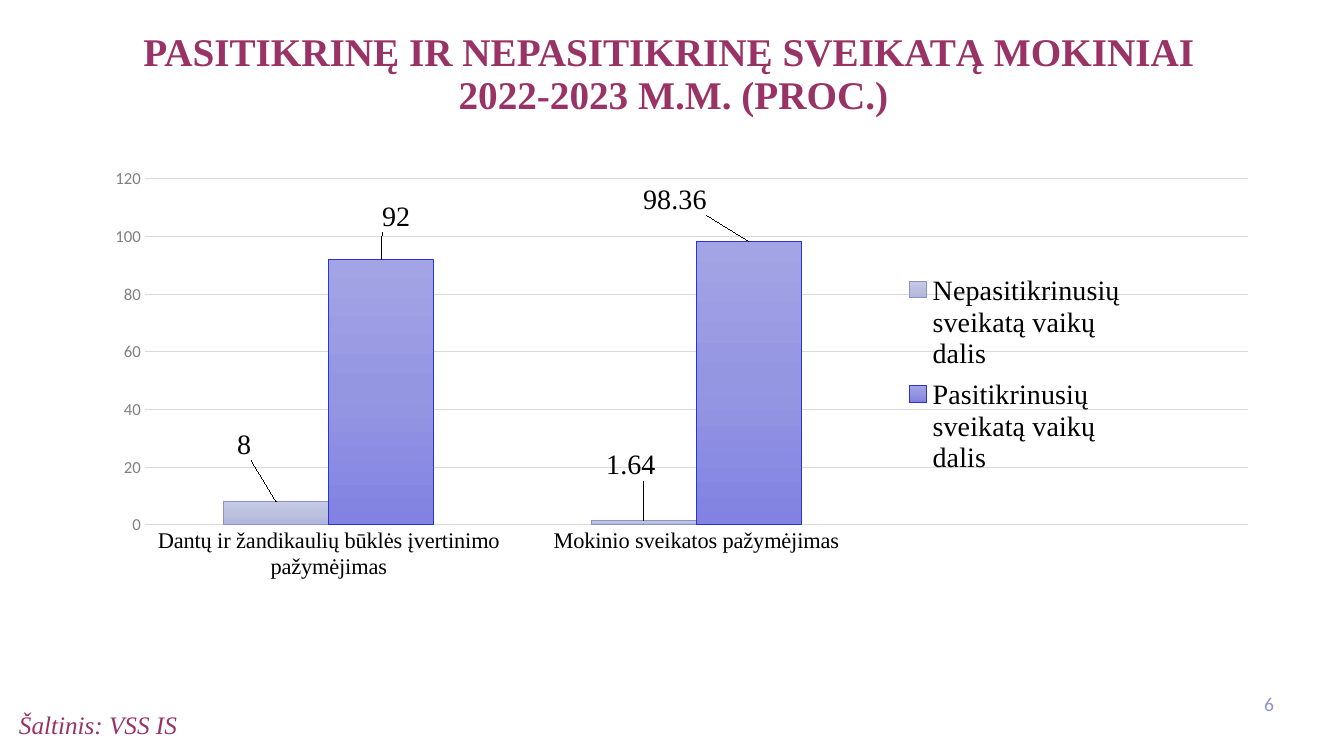
from copy import deepcopy

from lxml.etree import SubElement
from pptx import Presentation
from pptx.chart.data import CategoryChartData
from pptx.dml.color import RGBColor
from pptx.enum.chart import XL_CHART_TYPE, XL_LABEL_POSITION, XL_LEGEND_POSITION, XL_TICK_MARK
from pptx.enum.text import MSO_ANCHOR, PP_ALIGN
from pptx.oxml.ns import qn
from pptx.util import Pt

PX = 914400 / 100.8
SERIF = "Times New Roman"
SANS = "Calibri"
PLUM = RGBColor(0x99, 0x33, 0x66)
PERIWINKLE = RGBColor(0x8E, 0x96, 0xCD)
BLACK = RGBColor(0, 0, 0)
GRAY = RGBColor(0x80, 0x80, 0x80)
GRID = RGBColor(0xD9, 0xD9, 0xD9)
PALE_STOPS = (RGBColor(0xC8, 0xCB, 0xE6), RGBColor(0xBB, 0xC0, 0xDF), RGBColor(0xB1, 0xB6, 0xDD))
PALE_LINE = RGBColor(0x8A, 0x92, 0xC8)
BLUE_STOPS = (RGBColor(0xA3, 0xA4, 0xE6), RGBColor(0x95, 0x96, 0xE2), RGBColor(0x81, 0x82, 0xE2))
BLUE_LINE = RGBColor(0x2D, 0x33, 0xCB)

CATEGORIES = ("Dantų ir žandikaulių būklės įvertinimo pažymėjimas", "Mokinio sveikatos pažymėjimas", "")
SERIES = (
    ("Nepasitikrinusių sveikatą vaikų dalis", (8, 1.64, None),
     PALE_STOPS, PALE_LINE, ((-32, -37), (-13, -35))),
    ("Pasitikrinusių sveikatą vaikų dalis", (92, 98.36, None),
     BLUE_STOPS, BLUE_LINE, ((15, -23), (-74, -22))),
)


def px(length):
    return round(length * PX)


def set_font(font, name, size, color, bold=False, italic=False):
    font.name = name
    font.size = Pt(size)
    font.color.rgb = color
    font.bold = bold
    font.italic = italic


def add_text(slide, box, text, align=PP_ALIGN.LEFT, anchor=MSO_ANCHOR.TOP, spacing=1.0, **font):
    shape = slide.shapes.add_textbox(*map(px, box))
    frame = shape.text_frame
    frame.word_wrap = True
    frame.vertical_anchor = anchor
    paragraph = frame.paragraphs[0]
    paragraph.text = text
    paragraph.alignment = align
    paragraph.line_spacing = spacing
    for run in paragraph.runs:
        set_font(run.font, **font)


def make_layout(box, size, target=None):
    layout = SubElement(deepcopy(size["parent"]), qn("c:layout"))
    manual = SubElement(layout, qn("c:manualLayout"))
    if target:
        SubElement(manual, qn("c:layoutTarget"), val=target)
    if len(box) == 4:
        for name in ("xMode", "yMode"):
            SubElement(manual, qn(f"c:{name}"), val="edge")
    lengths = (size["width"], size["height"]) * 2
    for name, part, whole in zip("xywh", box, lengths):
        SubElement(manual, qn(f"c:{name}"), val=f"{part / whole:.4f}")
    return layout


def place(element, box, size, target=None, after=None):
    for existing in element.findall(qn("c:layout")):
        element.remove(existing)
    layout = make_layout(box, {**size, "parent": element}, target)
    if after is None:
        element.insert(0, layout)
    else:
        element.find(qn(after)).addnext(layout)


def format_axis(axis, name, size, color):
    axis.major_tick_mark = XL_TICK_MARK.NONE
    axis.minor_tick_mark = XL_TICK_MARK.NONE
    axis.format.line.fill.background()
    set_font(axis.tick_labels.font, name, size, color)


def format_series(series, stops, line, offsets, size):
    fill = series.format.fill
    fill.gradient()
    fill.gradient_angle = 270
    stop_list = next(series._element.iter(qn("a:gsLst")))
    stop_list.insert(1, deepcopy(stop_list[0]))
    for index, (stop, color) in enumerate(zip(fill.gradient_stops, stops)):
        stop.position = index / 2
        stop.color.rgb = color
    series.format.line.color.rgb = line
    series.format.line.width = Pt(0.75)
    series.data_labels.show_value = True
    set_font(series.data_labels.font, SANS, 12, GRAY)
    for index, offset in enumerate(offsets):
        label = series.points[index].data_label
        set_font(label.font, SERIF, 20, BLACK)
        label.position = XL_LABEL_POSITION.OUTSIDE_END
    for element, offset in zip(series._element.iter(qn("c:dLbl")), offsets):
        place(element, offset, size, after="c:idx")


def add_health_chart(slide, box):
    data = CategoryChartData()
    data.categories = CATEGORIES
    for name, values, *_ in SERIES:
        data.add_series(name, values)
    chart = slide.shapes.add_chart(XL_CHART_TYPE.COLUMN_CLUSTERED, *map(px, box), data).chart
    size = {"width": box[2], "height": box[3]}
    chart.has_title = False
    set_font(chart.font, SANS, 10, BLACK)

    plot = chart.plots[0]
    plot.gap_width = 150
    plot.overlap = 0
    plot.vary_by_categories = False
    for series, (_, _, stops, line, offsets) in zip(plot.series, SERIES):
        format_series(series, stops, line, offsets, size)

    format_axis(chart.category_axis, SERIF, 16, BLACK)
    value_axis = chart.value_axis
    format_axis(value_axis, SANS, 12, GRAY)
    value_axis.minimum_scale = 0
    value_axis.maximum_scale = 120
    value_axis.major_unit = 20
    value_axis.major_gridlines.format.line.color.rgb = GRID
    value_axis.major_gridlines.format.line.width = Pt(0.75)

    chart.has_legend = True
    legend = chart.legend
    legend.position = XL_LEGEND_POSITION.BOTTOM
    legend.include_in_layout = False
    set_font(legend.font, SERIF, 20, BLACK)
    place(legend._element, (808, 108, 230, 218), size, after="c:legendPos")
    plot_area = next(chart._chartSpace.iter(qn("c:plotArea")))
    place(plot_area, (53, 21, 1103, 346), size, target="inner")


def build_slide(presentation):
    slide = presentation.slides.add_slide(presentation.slide_layouts[6])
    add_text(slide, (-12, 28, 1361, 139),
             "PASITIKRINĘ IR NEPASITIKRINĘ SVEIKATĄ MOKINIAI\n 2022-2023 M.M. (PROC.)",
             align=PP_ALIGN.CENTER, spacing=0.9, name=SERIF, size=28, color=PLUM, bold=True)
    add_text(slide, (9, 704, 635, 38), "Šaltinis: VSS IS",
             name=SERIF, size=18, color=PLUM, italic=True)
    add_text(slide, (1232, 684, 52, 40), "6", align=PP_ALIGN.RIGHT, anchor=MSO_ANCHOR.MIDDLE,
             name=SANS, size=14, color=PERIWINKLE)
    add_health_chart(slide, (92, 158, 1180, 545))


def main():
    presentation = Presentation()
    presentation.slide_width = px(1344)
    presentation.slide_height = px(756)
    build_slide(presentation)
    presentation.save("out.pptx")


if __name__ == "__main__":
    main()
